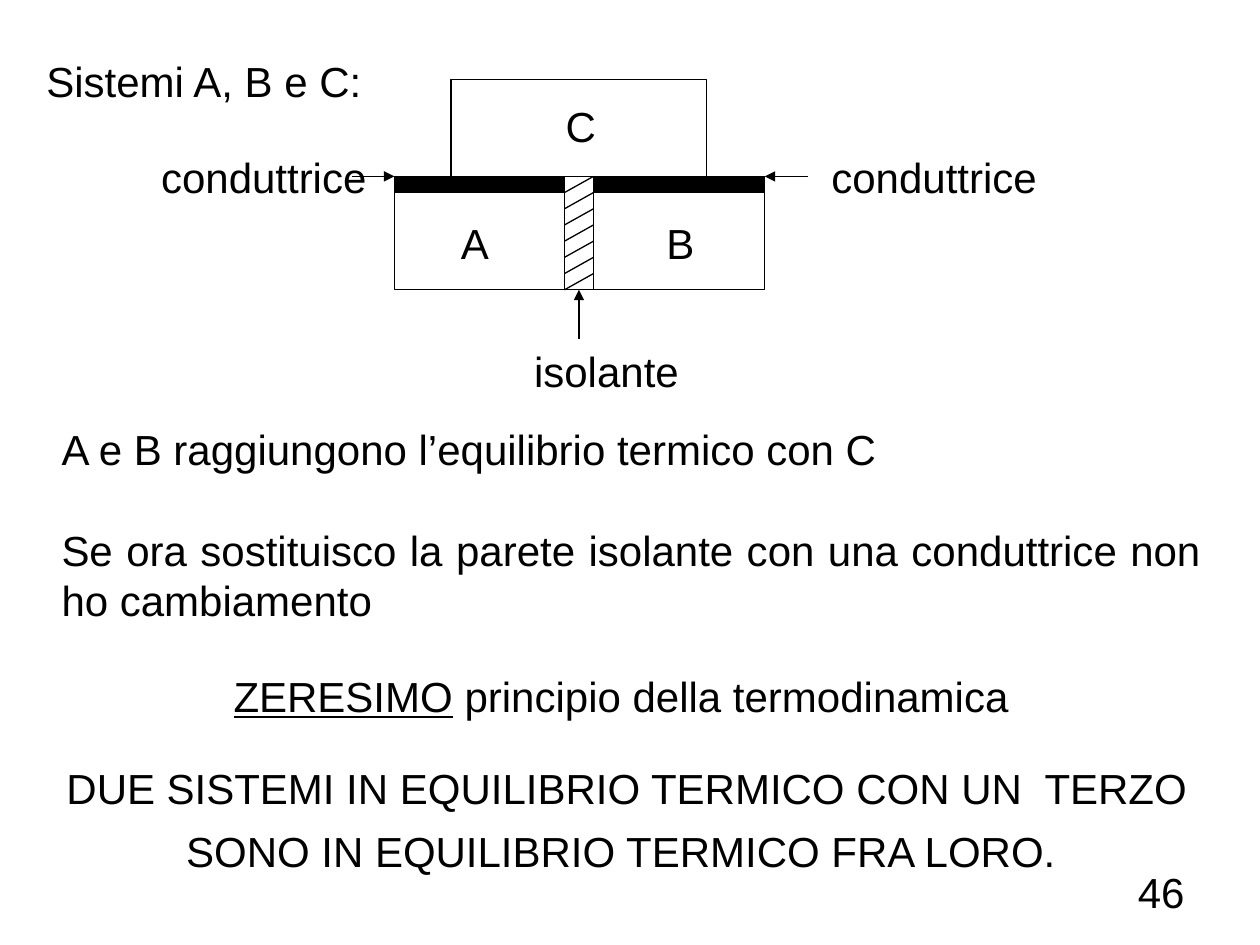
from lxml import etree
from pptx import Presentation
from pptx import util as u
from pptx.dml import color
from pptx.enum import shapes, text
from pptx.oxml import ns

COLUMNS, ROWS = 100, 75


def paint(value):
    return color.RGBColor.from_string(value)


class Board:
    """Draws styled elements on one slide, with lengths in grid columns and rows."""

    font, size, ink, weight = "Arial", 24, "000000", 0.75

    def __init__(self, presentation):
        self.column = presentation.slide_width / COLUMNS
        self.row = presentation.slide_height / ROWS
        self.slide = presentation.slides.add_slide(presentation.slide_layouts[6])

    def place(self, left, top, width, height):
        return (u.Emu(round(left * self.column)), u.Emu(round(top * self.row)),
                u.Emu(round(width * self.column)), u.Emu(round(height * self.row)))

    def label(self, box, *paragraphs, align=text.PP_ALIGN.LEFT, wrap=True,
              spacing=None, gap=0, underlined=""):
        frame = self.slide.shapes.add_textbox(*self.place(*box)).text_frame
        frame.word_wrap = wrap
        for index, words in enumerate(paragraphs):
            paragraph = frame.paragraphs[0] if index == 0 else frame.add_paragraph()
            paragraph.alignment = align
            paragraph.font.name = self.font
            paragraph.font.size = u.Pt(self.size)
            paragraph.font.color.rgb = paint(self.ink)
            if spacing:
                paragraph.line_spacing = spacing
            if index:
                paragraph.space_before = u.Pt(gap)
            if underlined:
                run = paragraph.add_run()
                run.text = underlined
                run.font.underline = True
            paragraph.add_run().text = words

    def block(self, box, fill=None):
        shape = self.slide.shapes.add_shape(shapes.MSO_SHAPE.RECTANGLE, *self.place(*box))
        shape.shadow.inherit = False
        if fill:
            shape.fill.solid()
            shape.fill.fore_color.rgb = paint(fill)
        else:
            shape.fill.background()
        self.outline(shape.line)
        return shape

    def outline(self, line):
        line.color.rgb = paint(self.ink)
        line.width = u.Pt(self.weight)

    def line(self, start, end, arrow=False, target=None, side=2):
        connector = self.slide.shapes.add_connector(
            shapes.MSO_CONNECTOR.STRAIGHT, *self.place(*start, *end))
        self.outline(connector.line)
        if arrow:
            etree.SubElement(connector.line._get_or_add_ln(), ns.qn("a:tailEnd"), type="triangle")
        etree.SubElement(connector._element.spPr, ns.qn("a:effectLst"))
        if target is not None:
            connector.end_connect(target, side)


def draw_systems(board):
    left, wall_left, wall_right, right = 31.3, 44.8, 47.1, 60.7
    top, system_top, bottom = 14, 15.3, 23
    board.block((35.8, 6.3, 20.3, top - 6.3))
    for start, end in ((left, wall_left), (wall_right, right)):
        board.block((start, system_top, end - start, bottom - system_top))
        board.block((start, top, end - start, system_top - top), board.ink)
    insulator = board.block((wall_left, top, wall_right - wall_left, bottom - top))

    hatches = 7
    step = (bottom - top) / hatches
    for index in range(hatches):
        y = bottom - index * step
        board.line((wall_left, y), (wall_right, y - step))

    board.line((left - 3.4, top), (left, top), arrow=True)
    board.line((right + 3.4, top), (right, top), arrow=True)
    middle = (wall_left + wall_right) / 2
    board.line((middle, 26.9), (middle, bottom), arrow=True, target=insulator)

    for box, words in (
        ((43.9, 7.5, 4.4, 3.9), "C"),
        ((35.6, 16.8, 4.4, 3.8), "A"),
        ((51.9, 16.8, 3.4, 3.8), "B"),
        ((11.8, 11.5, 18.3, 5.2), "conduttrice"),
        ((65, 11.5, 26, 5.2), "conduttrice"),
        ((41.4, 26.9, 17.6, 3.9), "isolante"),
    ):
        board.label(box, words)


def main():
    presentation = Presentation()
    presentation.slide_width, presentation.slide_height = u.Inches(10), u.Inches(7.5)
    board = Board(presentation)
    align = text.PP_ALIGN

    board.label((2.7, 3.9, 94.8, 5.1), "Sistemi A, B e C:", align=align.JUSTIFY)
    draw_systems(board)
    board.label((3.9, 33.1, 92.4, 17.2),
                "A e B raggiungono l’equilibrio termico con C",
                "Se ora sostituisco la parete isolante con una conduttrice non ho cambiamento",
                align=align.JUSTIFY, gap=29)
    board.label((17.3, 52.7, 64.9, 5.1), " principio della termodinamica ",
                align=align.CENTER, wrap=False, underlined="ZERESIMO")
    board.label((3.8, 59, 91.9, 11),
                "DUE SISTEMI IN EQUILIBRIO TERMICO CON UN  TERZO "
                "SONO IN EQUILIBRIO TERMICO FRA LORO. ",
                align=align.CENTER, spacing=1.25)
    board.label((71.7, 68.3, 23.3, 5.2), "46", align=align.RIGHT)
    presentation.save("out.pptx")


if __name__ == "__main__":
    main()
